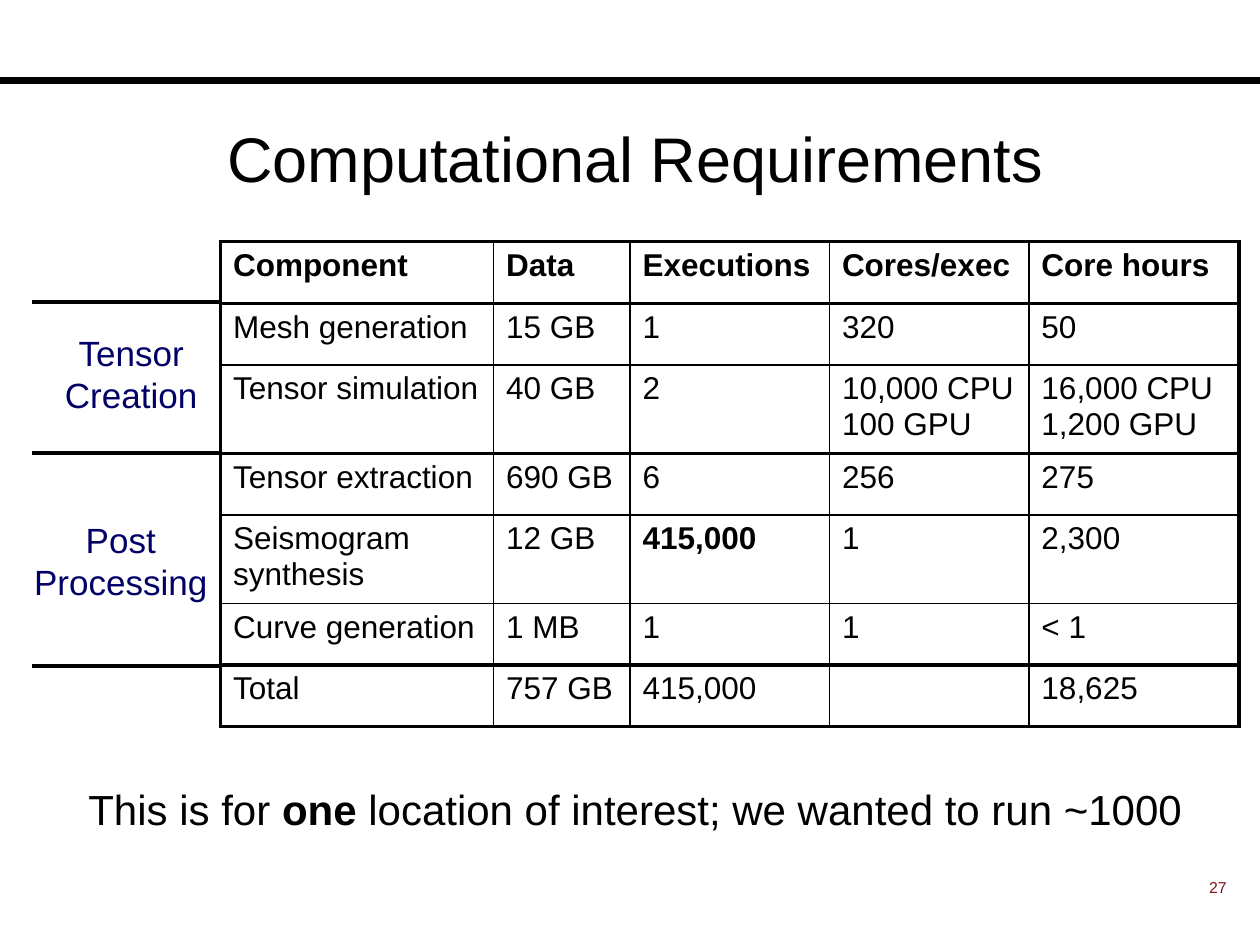
from lxml.etree import SubElement
from pptx import Presentation
from pptx.dml.color import RGBColor as RGB
from pptx.enum.shapes import MSO_CONNECTOR
from pptx.enum.text import MSO_ANCHOR as Anchor, PP_ALIGN as Align
from pptx.oxml.ns import qn
from pptx.util import Pt

COLORS = {"ink": "000000", "group": "000066", "number": "82151A", "paper": "FFFFFF"}
THICK, THIN = 2.25, 1
COLUMN_WIDTHS = [156, 78, 114, 114, 120]
ROW_HEIGHTS = [35.3, 35.3, 35.3, 35.3, 36.7, 35.3, 35.3]
THICK_ROW_EDGES = {0, 1, 3, 6, 7}
THICK_COLUMN_EDGES = {0, 5}
FLUSH_TEXTS = {"Core hours", "Seismogram synthesis"}
ROWS = [
    ["Component", "Data", "Executions", "Cores/exec", "Core hours"],
    ["Mesh generation", "15 GB", "1", "320", "50"],
    ["Tensor simulation", "40 GB", "2", "10,000 CPU\n100 GPU", "16,000 CPU\n1,200 GPU"],
    ["Tensor extraction", "690 GB", "6", "256", "275"],
    ["Seismogram synthesis", "12 GB", "*415,000*", "1", "2,300"],
    ["Curve generation", "1 MB", "1", "1", "< 1"],
    ["Total", "757 GB", "415,000", "", "18,625"],
]


def write_text(frame, text, size=18, color="ink", align=Align.LEFT, bold=False, hanging=0):
    """Write one paragraph per line; words between asterisks are bold."""
    for index, line in enumerate(text.split("\n")):
        paragraph = frame.paragraphs[0] if index == 0 else frame.add_paragraph()
        paragraph.alignment = align
        if hanging:
            properties = paragraph._p.get_or_add_pPr()
            properties.set("marL", str(Pt(hanging)))
            properties.set("indent", str(-Pt(hanging)))
        for part_index, part in enumerate(line.split("*")):
            if not part:
                continue
            run = paragraph.add_run()
            run.text = part
            run.font.name = "Arial"
            run.font.size = Pt(size)
            run.font.bold = bold or part_index % 2 == 1
            run.font.color.rgb = RGB.from_string(COLORS[color])


def set_borders(cell, widths):
    properties = cell._tc.get_or_add_tcPr()
    for index, (side, width) in enumerate(widths.items()):
        line = properties.makeelement(qn(f"a:ln{side}"), w=str(Pt(width)))
        fill = SubElement(line, qn("a:solidFill"))
        SubElement(fill, qn("a:srgbClr"), val=COLORS["ink"])
        properties.insert(index, line)


class SlideBuilder:
    """Holds the current slide and draws each kind of element on it."""

    def __init__(self, slide):
        self.slide = slide

    def text(self, box, text, anchor=Anchor.TOP, **style):
        frame = self.slide.shapes.add_textbox(*map(Pt, box)).text_frame
        frame.word_wrap = True
        frame.vertical_anchor = anchor
        write_text(frame, text, **style)

    def rule(self, left, right, top, width):
        line = self.slide.shapes.add_connector(
            MSO_CONNECTOR.STRAIGHT, Pt(left), Pt(top), Pt(right), Pt(top))
        line.line.width = Pt(width)
        line.line.color.rgb = RGB.from_string(COLORS["ink"])
        SubElement(line._element.spPr, qn("a:effectLst"))

    def table(self, left, top, rows):
        table = self.slide.shapes.add_table(
            len(rows), len(COLUMN_WIDTHS), Pt(left), Pt(top),
            Pt(sum(COLUMN_WIDTHS)), Pt(sum(ROW_HEIGHTS))).table
        table.horz_banding = False
        for column, width in zip(table.columns, COLUMN_WIDTHS):
            column.width = Pt(width)
        for row, height in zip(table.rows, ROW_HEIGHTS):
            row.height = Pt(height)
        for r, texts in enumerate(rows):
            for c, text in enumerate(texts):
                self.cell(table.cell(r, c), r, c, text)

    def cell(self, cell, row, column, text):
        def column_edge(edge):
            return THICK if edge in THICK_COLUMN_EDGES else THIN

        def row_edge(edge):
            return THICK if edge in THICK_ROW_EDGES else THIN

        cell.fill.solid()
        cell.fill.fore_color.rgb = RGB.from_string(COLORS["paper"])
        set_borders(cell, {"L": column_edge(column), "R": column_edge(column + 1),
                           "T": row_edge(row), "B": row_edge(row + 1)})
        left_aligned = row == 0 and column >= 3
        write_text(cell.text_frame, text, bold=row == 0,
                   align=Align.LEFT if left_aligned else Align.JUSTIFY,
                   hanging=0 if text in FLUSH_TEXTS else 27)


def main():
    presentation = Presentation()
    presentation.slide_width, presentation.slide_height = Pt(720), Pt(540)
    builder = SlideBuilder(presentation.slides.add_slide(presentation.slide_layouts[6]))

    builder.rule(0, 720, 46, 4.5)
    builder.text((630, 498, 78, 18), "27", size=9, color="number", align=Align.RIGHT)
    builder.text((12, 48, 702, 84), "Computational Requirements",
                 size=36, align=Align.CENTER, anchor=Anchor.MIDDLE)
    builder.table(126, 138, ROWS)
    for box, label in [((18, 186, 114, 55.5), "Tensor Creation"),
                       ((9, 293, 120, 55.5), "Post Processing")]:
        builder.text(box, label, size=20, color="group", align=Align.CENTER)
    for top in (172.5, 259, 380.5):
        builder.rule(18, 126, top, THICK)
    builder.text((18, 444, 690, 36),
                 "This is for *one* location of interest; we wanted to run ~1000",
                 size=24, align=Align.CENTER)
    presentation.save("out.pptx")


if __name__ == "__main__":
    main()
